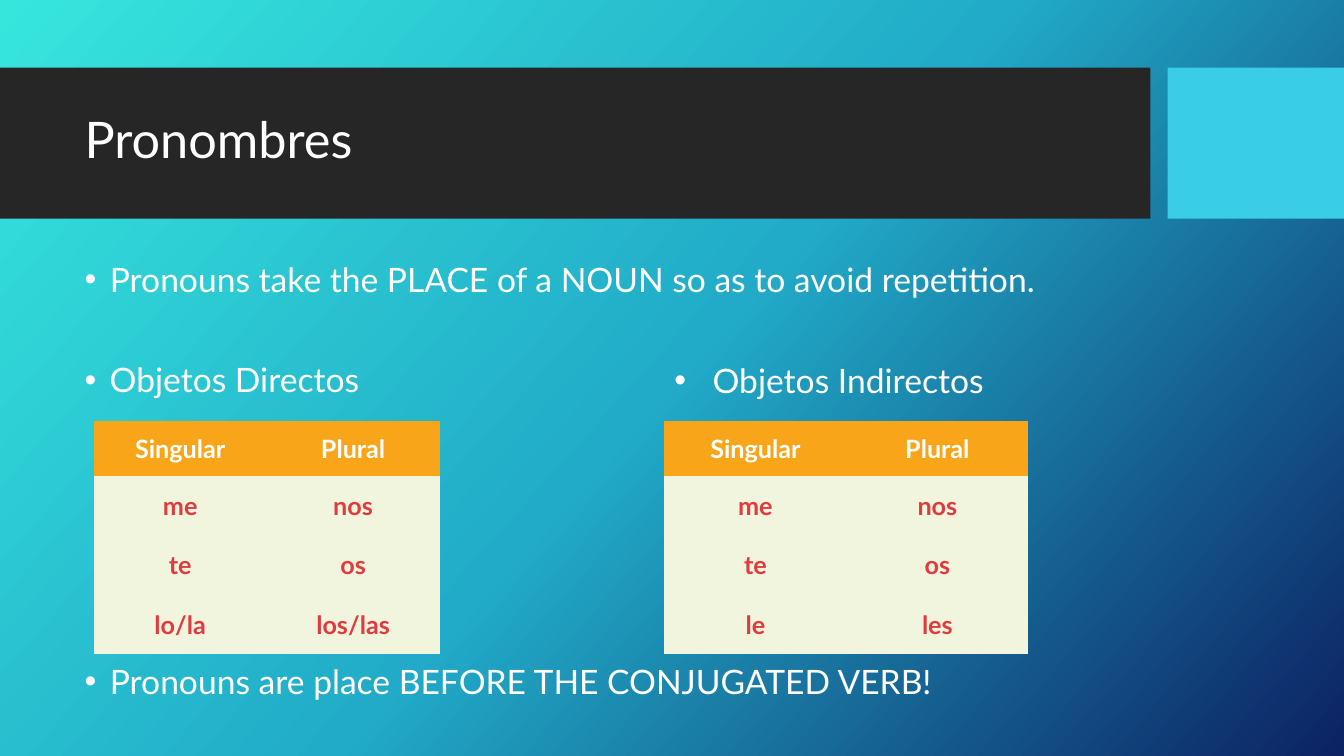
from lxml import etree
from pptx import Presentation
from pptx.dml.color import RGBColor
from pptx.enum.shapes import MSO_SHAPE
from pptx.enum.text import MSO_ANCHOR, PP_ALIGN
from pptx.oxml.ns import qn
from pptx.util import Inches, Pt

RECTANGLE = MSO_SHAPE.RECTANGLE
MIDDLE, TOP = MSO_ANCHOR.MIDDLE, MSO_ANCHOR.TOP
CENTER = PP_ALIGN.CENTER
PLAIN_TABLE = "{2D5ABB26-0587-4C30-8999-92F81FD0307C}"

THEME = {
    "font": "Lato",
    "title_size": 36, "bullet_size": 24, "table_size": 18,
    "text": "FFFFFF", "pronoun": "E03C3F",
    "header_fill": "F9A51A", "body_fill": "F1F5DD",
    "gradient": [(0, "36E6DD"), (50, "21ABC8"), (100, "0C2263")],
    "gradient_angle": 42,
}

TITLE = "Pronombres"
BANDS = [(0, 11.41, "262626"), (11.58, 1.75, "39CDE7")]
BULLETS = [
    ("Pronouns take the PLACE of a NOUN so as to avoid repetition.", 0.74, 2.56, 10.51, 0.25, 0.9),
    ("Objetos Directos", 0.74, 3.56, 5, 0.25, 0.9),
    ("Objetos Indirectos", 6.59, 3.52, 3.6, 0.38, 1.0),
    ("Pronouns are place BEFORE THE CONJUGATED VERB!", 0.74, 6.55, 10.51, 0.25, 0.9),
]
HEADERS = ("Singular", "Plural")
PRONOUN_TABLES = [
    (0.93, 3.43, [HEADERS, ("me", "nos"), ("te", "os"), ("lo/la", "los/las")]),
    (6.59, 3.61, [HEADERS, ("me", "nos"), ("te", "os"), ("le", "les")]),
]
TABLE_TOP, HEADER_HEIGHT, ROW_HEIGHT = 4.18, 0.54, 0.59


def color(value):
    return RGBColor.from_string(value)


def style(paragraph, size, ink, bold=False):
    font = paragraph.font
    font.name = THEME["font"]
    font.size = Pt(size)
    font.bold = bold
    font.color.rgb = color(ink)


def paint_background(slide):
    fill = slide.background.fill
    fill.gradient()
    gradient = slide.background._cSld.find(".//" + qn("a:gradFill"))
    stops = gradient.find(qn("a:gsLst"))
    for stop in list(stops):
        stops.remove(stop)
    for position, value in THEME["gradient"]:
        stop = etree.SubElement(stops, qn("a:gs"), pos=str(position * 1000))
        etree.SubElement(stop, qn("a:srgbClr"), val=value)
    gradient.find(qn("a:lin")).set("ang", str(THEME["gradient_angle"] * 60000))


def add_band(slide, left, width, fill):
    band = slide.shapes.add_shape(RECTANGLE, Inches(left), Inches(0.67), Inches(width), Inches(1.5))
    band.shadow.inherit = False
    band.fill.solid()
    band.fill.fore_color.rgb = color(fill)
    band.line.fill.background()


def add_text(slide, text, left, top, width, height, anchor, spacing):
    frame = slide.shapes.add_textbox(
        Inches(left), Inches(top), Inches(width), Inches(height)).text_frame
    frame.word_wrap = True
    frame.vertical_anchor = anchor
    paragraph = frame.paragraphs[0]
    paragraph.text = text
    paragraph.line_spacing = spacing
    return paragraph


def add_bullet(slide, text, left, top, width, indent, spacing):
    paragraph = add_text(slide, text, left, top, width, 0.5, TOP, spacing)
    properties = paragraph._p.get_or_add_pPr()
    properties.set("marL", str(Inches(indent)))
    properties.set("indent", str(-Inches(indent)))
    etree.SubElement(properties, qn("a:buFont"), typeface="Arial")
    etree.SubElement(properties, qn("a:buChar"), char="•")
    style(paragraph, THEME["bullet_size"], THEME["text"])


def add_pronoun_table(slide, left, width, rows):
    height = HEADER_HEIGHT + ROW_HEIGHT * (len(rows) - 1)
    frame = slide.shapes.add_table(
        len(rows), len(HEADERS), Inches(left), Inches(TABLE_TOP), Inches(width), Inches(height))
    table = frame.table
    table.horz_banding = False
    table._tbl.tblPr.find(qn("a:tableStyleId")).text = PLAIN_TABLE
    for r, words in enumerate(rows):
        is_header = r == 0
        table.rows[r].height = Inches(HEADER_HEIGHT if is_header else ROW_HEIGHT)
        for c, word in enumerate(words):
            cell = table.cell(r, c)
            cell.text = word
            cell.vertical_anchor = MIDDLE
            if is_header:
                cell.margin_left = cell.margin_right = Inches(0.07)
                cell.margin_top = cell.margin_bottom = Inches(0.03)
            cell.fill.solid()
            cell.fill.fore_color.rgb = color(THEME["header_fill" if is_header else "body_fill"])
            paragraph = cell.text_frame.paragraphs[0]
            paragraph.alignment = CENTER
            style(paragraph, THEME["table_size"], THEME["text" if is_header else "pronoun"], True)


def main():
    deck = Presentation()
    deck.slide_width, deck.slide_height = Inches(13.33), Inches(7.5)
    slide = deck.slides.add_slide(deck.slide_layouts[6])
    paint_background(slide)
    for band in BANDS:
        add_band(slide, *band)
    title = add_text(slide, TITLE, 0.74, 0.82, 10.51, 1.18, MIDDLE, 0.9)
    style(title, THEME["title_size"], THEME["text"])
    for bullet in BULLETS:
        add_bullet(slide, *bullet)
    for pronoun_table in PRONOUN_TABLES:
        add_pronoun_table(slide, *pronoun_table)
    deck.save("out.pptx")


if __name__ == "__main__":
    main()
